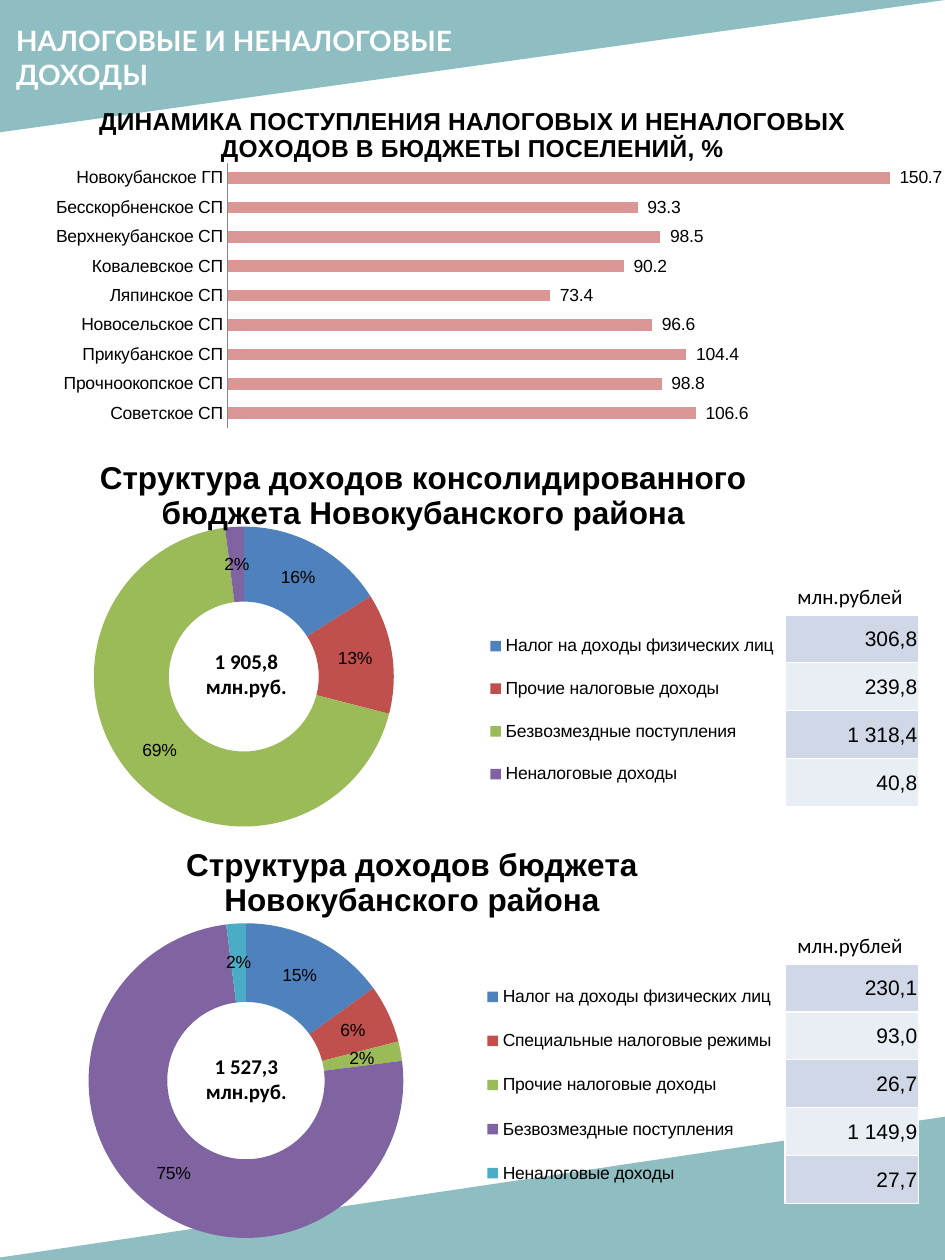
from lxml import etree
from pptx import Presentation
from pptx.chart.data import CategoryChartData
from pptx.dml.color import RGBColor
from pptx.enum.chart import XL_CHART_TYPE, XL_LEGEND_POSITION, XL_TICK_LABEL_POSITION, XL_TICK_MARK
from pptx.enum.shapes import MSO_SHAPE
from pptx.enum.text import MSO_ANCHOR, PP_ALIGN
from pptx.oxml import parse_xml
from pptx.oxml.ns import qn
from pptx.util import Inches, Pt

BAR, RING = XL_CHART_TYPE.BAR_CLUSTERED, XL_CHART_TYPE.DOUGHNUT
LEFT, MID, RIGHT = PP_ALIGN.LEFT, PP_ALIGN.CENTER, PP_ALIGN.RIGHT
NS = "http://schemas.openxmlformats.org/drawingml/2006/main"
W, H = 7.5, 10
HEX = {"teal": "519AA0", "white": "FFFFFF", "black": "000000", "bar": "D99694",
       "axis": "868686", "odd": "D0D8E8", "even": "E9EDF4"}
SLICES = ["4F81BD", "C0504D", "9BBB59", "8064A2", "4BACC6"]
UNIT = "млн.рублей"
HEAD = "НАЛОГОВЫЕ И НЕНАЛОГОВЫЕ ДОХОДЫ"
GROWTH = {
    "title": "ДИНАМИКА ПОСТУПЛЕНИЯ НАЛОГОВЫХ И НЕНАЛОГОВЫХ ДОХОДОВ В БЮДЖЕТЫ ПОСЕЛЕНИЙ, %",
    "box": (0, 0.69, W, 2.82), "plot": (0.241, 0.215, 0.744, 0.745),
    "rows": [("Новокубанское ГП", 150.7), ("Бесскорбненское СП", 93.3),
             ("Верхнекубанское СП", 98.5), ("Ковалевское СП", 90.2),
             ("Ляпинское СП", 73.4), ("Новосельское СП", 96.6),
             ("Прикубанское СП", 104.4), ("Прочноокопское СП", 98.8),
             ("Советское СП", 106.6)],
}
# Each row: source of income, share in %, sum in million roubles
BUDGETS = [
    {"title": "Структура доходов консолидированного бюджета Новокубанского района",
     "total": "1 905,8 млн.руб.", "total_top": 5.1, "table_top": 4.88,
     "box": (-0.09, 3.46, 6.9, 3.2), "plot": (0.121, 0.225, 0.345, 0.744),
     "legend": (0.57, 0.44, 0.34, 0.48),
     "rows": [("Налог на доходы физических лиц", 16, "306,8"),
              ("Прочие налоговые доходы", 13, "239,8"),
              ("Безвозмездные поступления", 69, "1 318,4"),
              ("Неналоговые доходы", 2, "40,8")]},
    {"title": "Структура доходов бюджета Новокубанского района",
     "total": "1 527,3 млн.руб.", "total_top": 8.31, "table_top": 7.65,
     "box": (-0.18, 6.53, 6.9, 3.47), "plot": (0.128, 0.23, 0.362, 0.72),
     "legend": (0.58, 0.32, 0.34, 0.56),
     "rows": [("Налог на доходы физических лиц", 15, "230,1"),
              ("Специальные налоговые режимы", 6, "93,0"),
              ("Прочие налоговые доходы", 2, "26,7"),
              ("Безвозмездные поступления", 75, "1 149,9"),
              ("Неналоговые доходы", 2, "27,7")]},
]
TABLE_X, TABLE_W, ROW = 6.23, 1.06, 0.38


def rgb(name):
    return RGBColor.from_string(HEX.get(name, name))


def paint(fill, name):
    fill.solid()
    fill.fore_color.rgb = rgb(name)


def style(font, face, size, color="black", bold=False):
    font.name, font.size, font.bold = face, Pt(size), bold
    font.color.rgb = rgb(color)


def wedge(slide, box, flip):
    shape = slide.shapes.add_shape(MSO_SHAPE.RIGHT_TRIANGLE, *map(Inches, box))
    shape.shadow.inherit = False
    shape.rotation = 180
    shape._element.spPr.find(qn("a:xfrm")).set(flip, "1")
    paint(shape.fill, "teal")
    tint = shape._element.spPr.find(".//" + qn("a:srgbClr"))
    etree.SubElement(tint, qn("a:alpha")).set("val", "64000")
    shape.line.fill.background()


def label(slide, box, text, face, size, color="black", bold=False, align=LEFT):
    frame = slide.shapes.add_textbox(*map(Inches, box)).text_frame
    frame.word_wrap = True
    para = frame.paragraphs[0]
    para.text, para.alignment = text, align
    style(para.font, face, size, color, bold)


def place(node, index, box, inner=False):
    """Give a plot area or legend a fixed place, as shares of its chart."""
    for old in node.findall(qn("c:layout")):
        node.remove(old)
    layout = etree.Element(qn("c:layout"))
    manual = etree.SubElement(layout, qn("c:manualLayout"))
    parts = [("layoutTarget", "inner")] if inner else []
    parts += [("xMode", "edge"), ("yMode", "edge"), *zip("xywh", box)]
    for tag, val in parts:
        etree.SubElement(manual, qn("c:" + tag)).set("val", str(val))
    node.insert(index, layout)


def draw(slide, kind, item, size):
    """Add a titled chart with one labelled series."""
    data = CategoryChartData()
    data.categories = [row[0] for row in item["rows"]]
    data.add_series("Series 1", [row[1] for row in item["rows"]])
    chart = slide.shapes.add_chart(kind, *map(Inches, item["box"]), data).chart
    style(chart.font, "Arial", 10)
    chart.has_title, chart.has_legend = True, False
    para = chart.chart_title.text_frame.paragraphs[0]
    para.text = item["title"]
    style(para.font, "Arial", size, bold=True)
    chart.chart_title.include_in_layout = False
    space = chart._chartSpace
    clear = f'<c:spPr xmlns:c="{space.nsmap["c"]}" xmlns:a="{NS}"><a:noFill/><a:ln><a:noFill/></a:ln></c:spPr>'
    space.find(qn("c:chart")).addnext(parse_xml(clear))
    place(space.find(".//" + qn("c:plotArea")), 0, item["plot"], True)
    plot = chart.plots[0]
    plot.has_data_labels = True
    tags = plot.data_labels
    tags.show_value, tags.show_percentage = kind == BAR, kind == RING
    tags.number_format = "#\\ ##0.0" if kind == BAR else "0%"
    tags.number_format_is_linked = False
    style(tags.font, "Arial", 10)
    return chart


def bars(slide, item):
    chart = draw(slide, BAR, item, 14)
    plot = chart.plots[0]
    plot.gap_width, plot.overlap, plot.vary_by_categories = 150, -25, False
    paint(plot.series[0].format.fill, "bar")
    cat, val = chart.category_axis, chart.value_axis
    cat.reverse_order = True
    cat.major_tick_mark = cat.minor_tick_mark = XL_TICK_MARK.NONE
    cat.tick_label_position = XL_TICK_LABEL_POSITION.NEXT_TO_AXIS
    cat.format.line.color.rgb = rgb("axis")
    cat.format.line.width = Pt(0.75)
    val.minimum_scale, val.maximum_scale = 0, 160
    val.has_major_gridlines = val.visible = False


def ring(slide, item):
    chart = draw(slide, RING, item, 18)
    series = chart.plots[0].series[0]
    for i in range(len(item["rows"])):
        paint(series.points[i].format.fill, SLICES[i])
    chart.has_legend = True
    legend = chart.legend
    legend.position = XL_LEGEND_POSITION.RIGHT
    legend.include_in_layout = False
    style(legend.font, "Arial", 10)
    place(legend._element, 1, item["legend"])


def sums(slide, item):
    """Add the one-column table of sums."""
    rows, top = item["rows"], item["table_top"]
    box = TABLE_X, top, TABLE_W, ROW * len(rows)
    table = slide.shapes.add_table(len(rows), 1, *map(Inches, box)).table
    for i, row in enumerate(rows):
        cell = table.cell(i, 0)
        cell.text, cell.vertical_anchor = row[2], MSO_ANCHOR.MIDDLE
        cell.margin_left = cell.margin_right = cell.margin_top = Inches(0.01)
        cell.margin_bottom = 0
        para = cell.text_frame.paragraphs[0]
        para.alignment = RIGHT
        style(para.font, "Arial", 12)
        props = cell._tc.get_or_add_tcPr()
        for side in "LRTB":
            props.append(parse_xml(
                f'<a:ln{side} xmlns:a="{NS}" w="12700"><a:solidFill>'
                f'<a:srgbClr val="{HEX["white"]}"/></a:solidFill></a:ln{side}>'))
        paint(cell.fill, "even" if i % 2 else "odd")


def main():
    deck = Presentation()
    deck.slide_width, deck.slide_height = Inches(W), Inches(H)
    slide = deck.slides.add_slide(deck.slide_layouts[6])
    wedge(slide, (0, 0, W, 1.05), "flipH")
    wedge(slide, (-0.13, 8.86, 7.65, 1.14), "flipV")
    label(slide, (0.03, 0.14, 4.51, 0.64), HEAD, "Lato", 16, "white", True)
    bars(slide, GROWTH)
    for item in BUDGETS:
        label(slide, (TABLE_X, item["table_top"] - 0.3, 1.15, 0.3), UNIT, "Calibri", 12)
        sums(slide, item)
        ring(slide, item)
        label(slide, (1.51, item["total_top"], 0.89, 0.5), item["total"], "Calibri", 12, bold=True, align=MID)
    deck.save("out.pptx")


if __name__ == "__main__":
    main()
